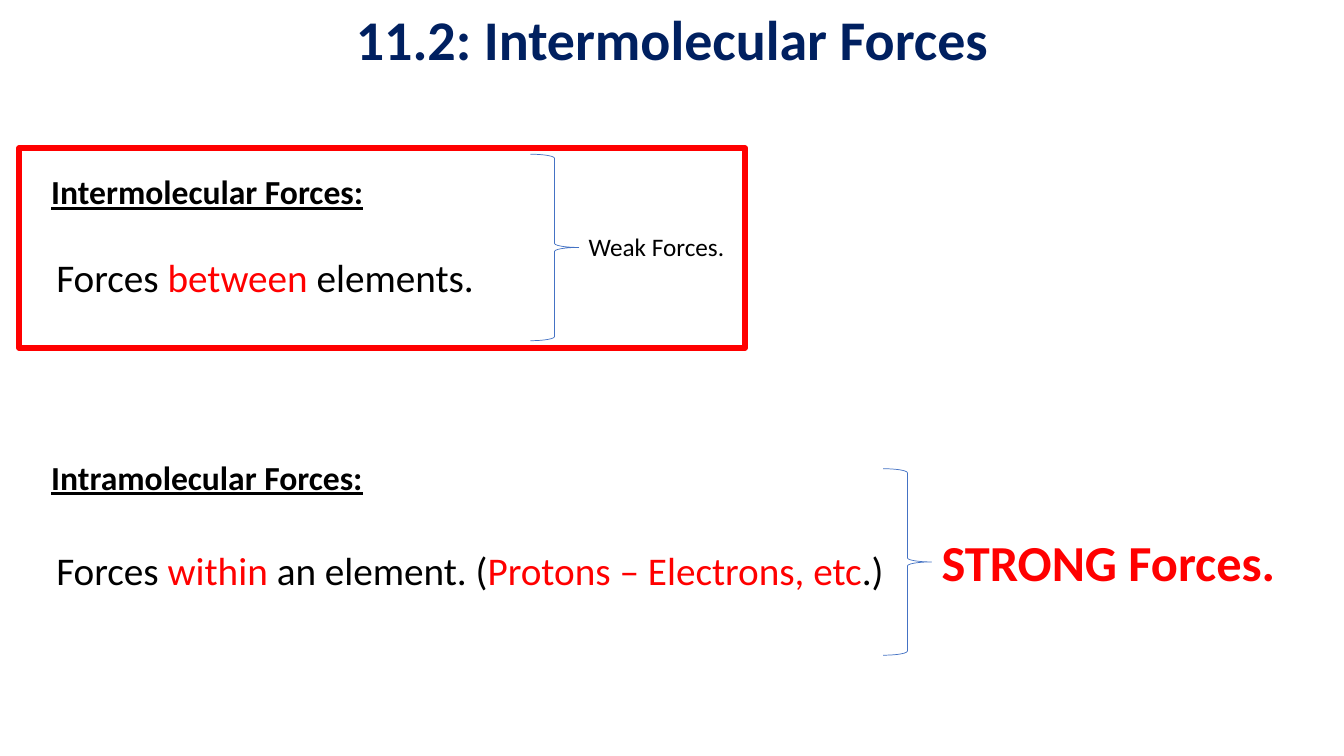
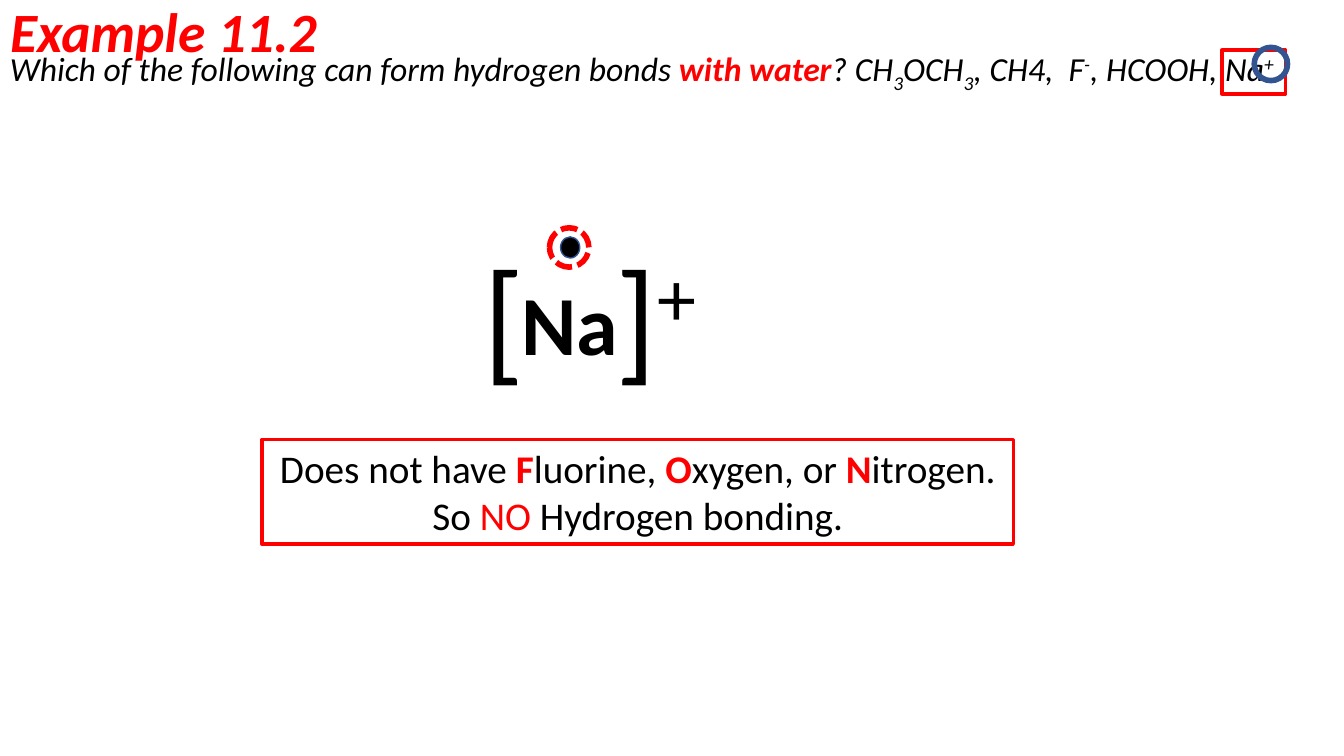
import pptx
import pptx.dml.color
import pptx.enum.dml
import pptx.enum.shapes
import pptx.enum.text
import pptx.oxml.ns
import pptx.util
from lxml import etree

Inches = pptx.util.Inches
Pt = pptx.util.Pt
Preset = pptx.enum.shapes.MSO_SHAPE
Align = pptx.enum.text.PP_ALIGN

FONT = "Calibri"
BLACK, RED, NAVY = "000000", "FF0000", "002060"
BLUE, DARK_BLUE = "4472C4", "325491"


def color(hex_value):
    return pptx.dml.color.RGBColor.from_string(hex_value)


def add_text(paragraph, text, size=28, ink=BLACK, bold=False, italic=False,
             underline=False, baseline=0):
    run = paragraph.add_run()
    run.text = text
    font = run.font
    font.name = FONT
    font.size = Pt(size)
    font.color.rgb = color(ink)
    font.bold, font.italic, font.underline = bold, italic, underline
    if baseline:
        run._r.get_or_add_rPr().set("baseline", str(baseline * 1000))


def add_tab_stop(paragraph, position):
    properties = paragraph._p.get_or_add_pPr()
    stops = etree.SubElement(properties, pptx.oxml.ns.qn("a:tabLst"))
    etree.SubElement(stops, pptx.oxml.ns.qn("a:tab"),
                     pos=str(Inches(position)), algn="l")


class Deck:
    def __init__(self):
        self.presentation = pptx.Presentation()
        self.presentation.slide_width = Inches(13.33)
        self.presentation.slide_height = Inches(7.5)
        self.slide = None

    def start_slide(self, title, at, align=Align.LEFT, **style):
        layout = self.presentation.slide_layouts[5]
        self.slide = self.presentation.slides.add_slide(layout)
        heading = self.slide.shapes.title
        heading.left, heading.top, heading.width, heading.height = map(Inches, at)
        frame = heading.text_frame
        frame.auto_size = pptx.enum.text.MSO_AUTO_SIZE.NONE
        frame.vertical_anchor = pptx.enum.text.MSO_ANCHOR.MIDDLE
        paragraph = frame.paragraphs[0]
        paragraph.alignment = align
        paragraph.line_spacing = 0.9
        add_text(paragraph, title, bold=True, **style)

    def fill_frame(self, frame, parts, align=Align.LEFT, tab=None, **style):
        frame.word_wrap = True
        frame.vertical_anchor = pptx.enum.text.MSO_ANCHOR.TOP
        paragraph = frame.paragraphs[0]
        paragraph.alignment = align
        if tab:
            add_tab_stop(paragraph, tab)
        for text, changes in parts:
            add_text(paragraph, text, **{**style, **changes})

    def text(self, at, *parts, **style):
        box = self.slide.shapes.add_textbox(*map(Inches, at))
        self.fill_frame(box.text_frame, parts, **style)

    def shape(self, preset, at, line, width, fill=None, dash=None):
        shape = self.slide.shapes.add_shape(preset, *map(Inches, at))
        shape.shadow.inherit = False
        if fill:
            shape.fill.solid()
            shape.fill.fore_color.rgb = color(fill)
        else:
            shape.fill.background()
        shape.line.color.rgb = color(line)
        shape.line.width = Pt(width)
        if dash:
            shape.line.dash_style = dash
        return shape

    def brace(self, left, top):
        self.shape(Preset.RIGHT_BRACE, (left, top, 0.48, 1.85), BLUE, 0.5)


def build_forces(deck):
    deck.start_slide("11.2: Intermolecular Forces", (0, 0, 13.33, 0.85),
                     Align.CENTER, size=40, ink=NAVY)
    red = {"ink": RED}
    for name, top in (("Intermolecular", 1.65), ("Intramolecular", 4.48)):
        deck.text((0.41, top, 3.38, 0.5), (f"{name} Forces:", {}),
                  size=24, bold=True, underline=True)
    deck.text((0.46, 2.46, 4.48, 0.57),
              ("Forces", {}), (" between ", red), ("elements.", {}))
    deck.text((0.46, 5.37, 8.48, 0.57),
              ("Forces", {}), (" within ", red), ("an element. (", {}),
              ("Protons – Electrons, etc", red), (".)", {}))
    deck.shape(Preset.RECTANGLE, (0.19, 1.47, 7.2, 1.98), RED, 4.25)
    deck.brace(5.26, 1.53)
    deck.text((5.74, 2.25, 3.5, 0.4), ("Weak Forces.", {}), size=18)
    deck.brace(8.76, 4.65)
    deck.text((9.24, 5.22, 3.8, 0.71), ("STRONG Forces.", {}),
              size=36, ink=RED, bold=True)


def build_example(deck):
    deck.start_slide("Example 11.2", (0, -0.01, 11.5, 0.71),
                     size=39.6, ink=RED, italic=True)
    strong = {"ink": RED, "bold": True}
    below, above = {"baseline": -25}, {"baseline": 30}
    deck.text((0, 0.43, 13.33, 0.5),
              ("Which of the following can form hydrogen bonds ", {}),
              ("with water", strong), ("? CH", {}), ("3", below),
              ("OCH", {}), ("3", below), (", CH4,  F", {}), ("-", above),
              (", HCOOH, Na", {}), ("+", above), (".", {}),
              size=24, italic=True)
    deck.shape(Preset.RECTANGLE, (12.12, 0.5, 0.63, 0.43), RED, 2.75)
    deck.text((5.07, 2.64, 1.37, 1.11), ("Na", {}), size=60, bold=True)
    deck.shape(Preset.OVAL, (5.45, 2.26, 0.39, 0.39), RED, 4,
               dash=pptx.enum.dml.MSO_LINE.SQUARE_DOT)
    deck.shape(Preset.OVAL, (5.56, 2.35, 0.19, 0.21), DARK_BLUE, 1, fill=BLACK)
    deck.shape(Preset.OVAL, (12.44, 0.47, 0.33, 0.33), DARK_BLUE, 4)
    deck.text((4.7, 2.26, 2.45, 1.72), ("[\t]", {}), ("+", above),
              size=96, tab=1.31)
    conclusion = deck.shape(Preset.RECTANGLE, (2.6, 4.36, 7.45, 1.04), RED, 2.5)
    deck.fill_frame(conclusion.text_frame,
                    (("Does not have ", {}), ("F", strong), ("luorine, ", {}),
                     ("O", strong), ("xygen, or ", {}), ("N", strong),
                     ("itrogen. So ", {}), ("NO", {"ink": RED}),
                     (" Hydrogen bonding.", {})), Align.CENTER)


def main():
    deck = Deck()
    build_forces(deck)
    build_example(deck)
    deck.presentation.save("out.pptx")


if __name__ == "__main__":
    main()
